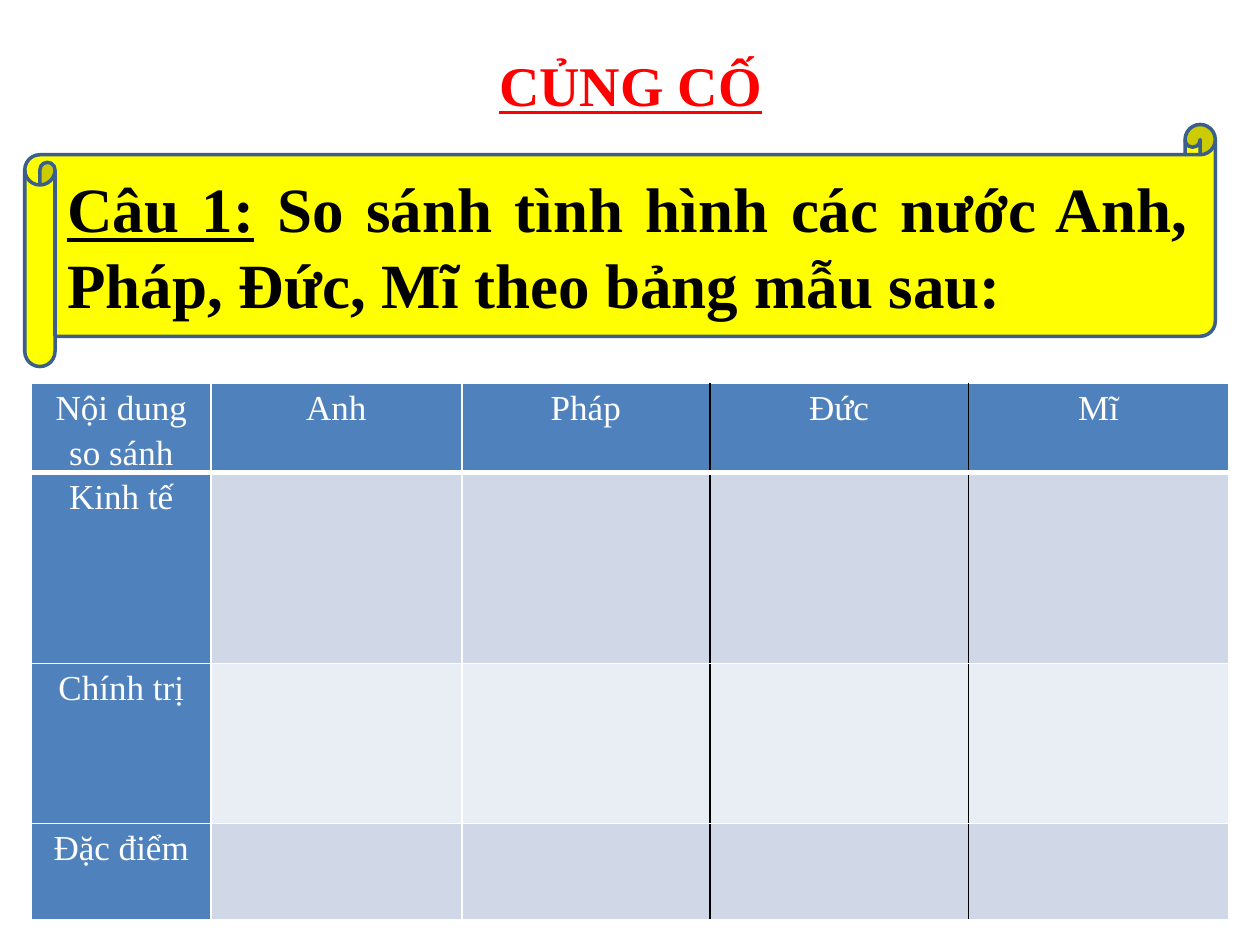
from lxml import etree
from pptx import Presentation, util as u
from pptx.dml.color import RGBColor
from pptx.enum import shapes, text
from pptx.oxml.ns import qn

FONT = "Times New Roman"
HEADERS = ["Nội dung so sánh", "Anh", "Pháp", "Đức", "Mĩ"]
TOPICS = ["Kinh tế", "Chính trị", "Đặc điểm"]
COLUMN_WIDTHS = [3.61, 5.06, 5.0, 5.21, 5.25]
ROW_HEIGHTS = [1.8, 3.84, 3.23, 1.93]
HEADER_FILL = "4F81BD"
BAND_FILLS = ["E9EDF4", "D0D8E8"]


def color(value):
    return RGBColor.from_string(value)


def add_text(para, words, size=20, ink="000000", bold=False, underline=False,
             align=text.PP_ALIGN.CENTER, spacing=None):
    para.alignment = align
    para.line_spacing = spacing
    span = para.add_run()
    span.text = words
    font = span.font
    font.name, font.size = FONT, u.Pt(size)
    font.bold, font.underline = bold, underline
    font.color.rgb = color(ink)


def add_title(page, words):
    box = page.shapes.add_textbox(u.Cm(9.78), u.Cm(0.89), u.Cm(5.87), u.Cm(1.63))
    box.text_frame.word_wrap = False
    box.text_frame.auto_size = text.MSO_AUTO_SIZE.SHAPE_TO_FIT_TEXT
    add_text(box.text_frame.paragraphs[0], words, size=32, ink="FF0000",
             bold=True, underline=True)


def add_question(page, label, words):
    scroll = page.shapes.add_shape(shapes.MSO_SHAPE.HORIZONTAL_SCROLL,
                                   u.Cm(0.5), u.Cm(2.51), u.Cm(24), u.Cm(4.88))
    scroll.shadow.inherit = False
    scroll.fill.solid()
    scroll.fill.fore_color.rgb = color("FFFF00")
    scroll.line.color.rgb = color("3A5F8C")
    scroll.line.width = u.Pt(2)
    frame = scroll.text_frame
    frame.word_wrap = True
    frame.vertical_anchor = text.MSO_ANCHOR.MIDDLE
    para = frame.paragraphs[0]
    style = dict(size=36, bold=True, align=text.PP_ALIGN.JUSTIFY)
    add_text(para, label, underline=True, **style)
    add_text(para, words, **style)


def add_border(cell, side, ink="FFFFFF", width=1):
    line = etree.SubElement(cell._tc.get_or_add_tcPr(), qn(f"a:ln{side}"),
                            w=str(u.Pt(width)))
    fill = etree.SubElement(line, qn("a:solidFill"))
    etree.SubElement(fill, qn("a:srgbClr"), val=ink)


def format_cell(cell, row, column):
    cell.margin_left = cell.margin_right = u.Cm(0.18)
    cell.margin_top = cell.margin_bottom = 0
    add_border(cell, "L", "000000" if column in (3, 4) else "FFFFFF")
    add_border(cell, "R", "000000" if column in (2, 3) else "FFFFFF")
    add_border(cell, "T")
    add_border(cell, "B", width=3 if row == 0 else 1)
    is_header = row == 0 or column == 0
    cell.fill.solid()
    cell.fill.fore_color.rgb = color(HEADER_FILL if is_header else BAND_FILLS[row % 2])


def add_comparison(page):
    table = page.shapes.add_table(
        len(ROW_HEIGHTS), len(COLUMN_WIDTHS), u.Cm(0.64), u.Cm(7.73),
        u.Cm(sum(COLUMN_WIDTHS)), u.Cm(sum(ROW_HEIGHTS))).table
    for column, width in zip(table.columns, COLUMN_WIDTHS):
        column.width = u.Cm(width)
    for row, height in zip(table.rows, ROW_HEIGHTS):
        row.height = u.Cm(height)
    labels = [HEADERS] + [[topic] + [""] * 4 for topic in TOPICS]
    for i, row_labels in enumerate(labels):
        for j, label in enumerate(row_labels):
            cell = table.cell(i, j)
            format_cell(cell, i, j)
            if label:
                add_text(cell.text_frame.paragraphs[0], label,
                         ink="FFFFFF", spacing=1.15)


def main():
    deck = Presentation()
    deck.slide_width, deck.slide_height = u.Cm(25.4), u.Cm(19.05)
    page = deck.slides.add_slide(deck.slide_layouts[6])
    add_comparison(page)
    add_title(page, "CỦNG CỐ")
    add_question(page, "Câu 1:",
                 " So sánh tình hình các nước Anh, Pháp, Đức, Mĩ theo bảng mẫu sau:")
    deck.save("out.pptx")


if __name__ == "__main__":
    main()
